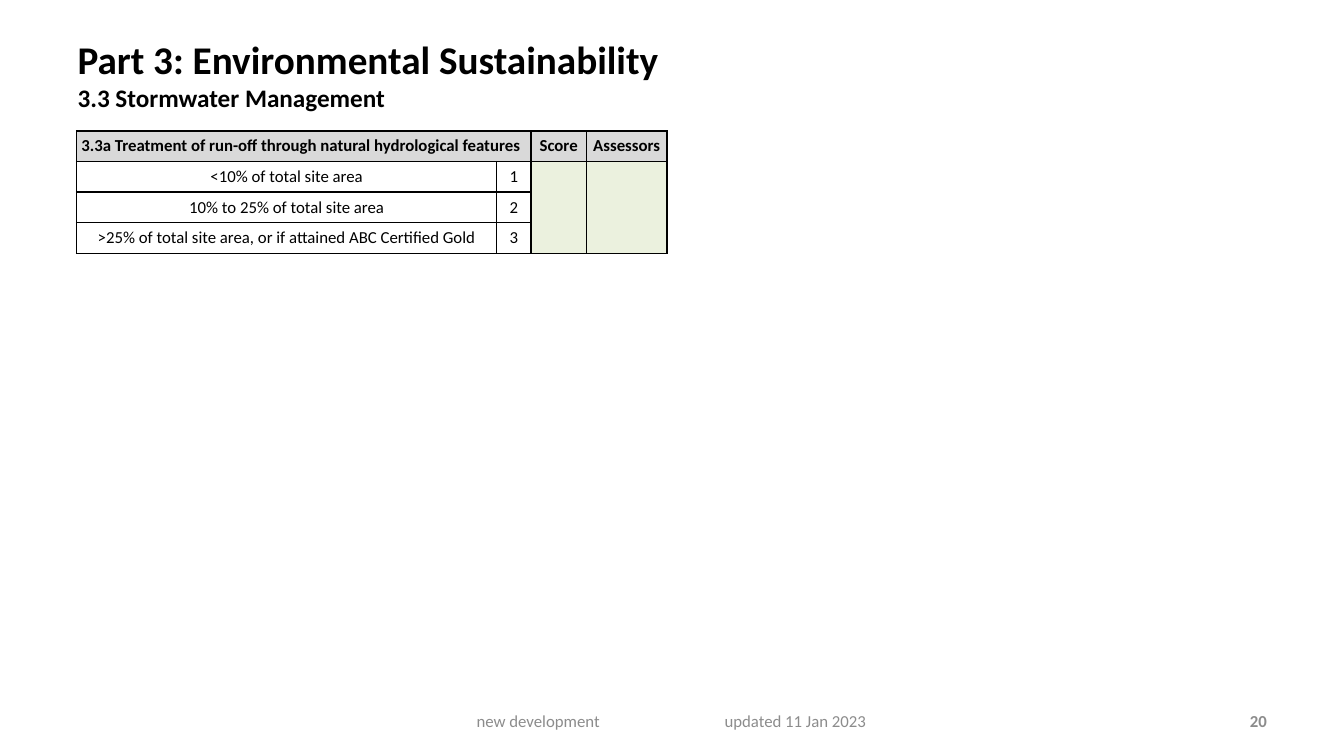
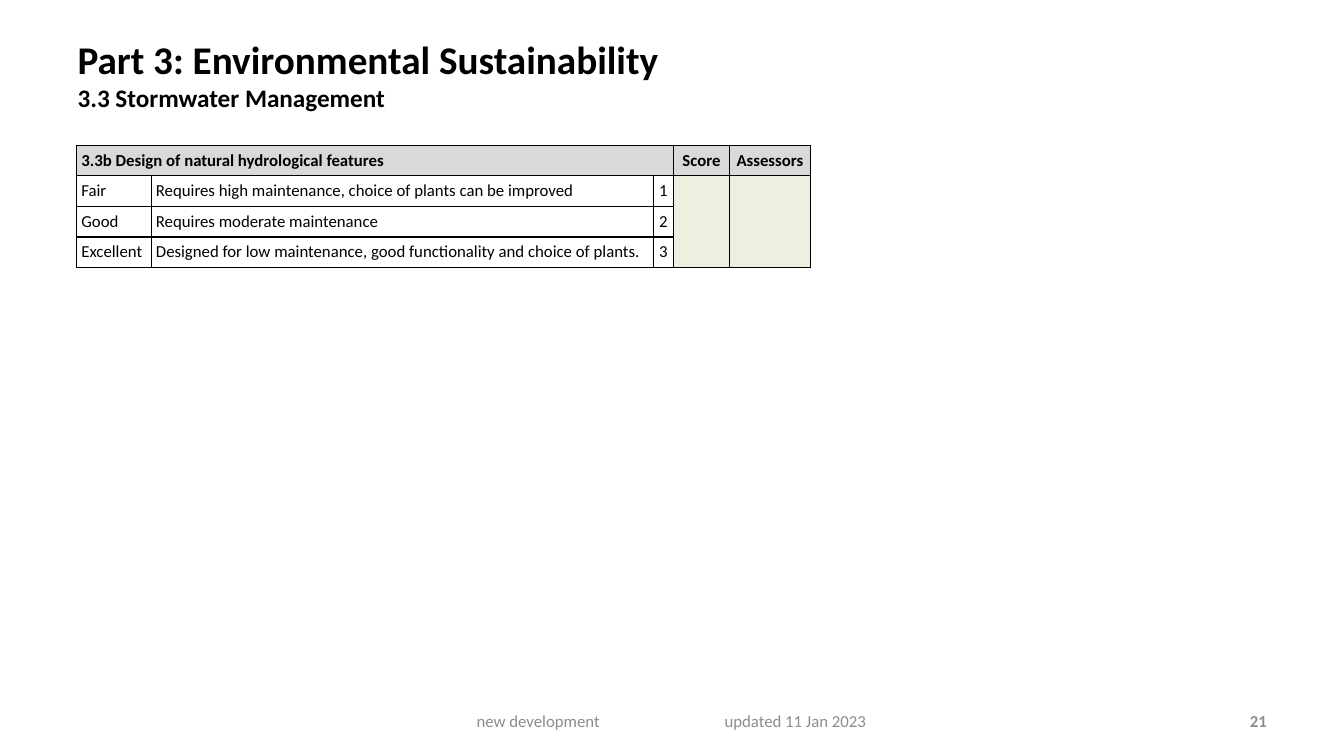
from dataclasses import dataclass

from lxml import etree
from pptx import Presentation
from pptx.dml.color import RGBColor
from pptx.enum.text import MSO_ANCHOR, MSO_AUTO_SIZE, PP_ALIGN
from pptx.oxml.ns import qn
from pptx.util import Cm, Pt

LEFT, CENTER, RIGHT = PP_ALIGN.LEFT, PP_ALIGN.CENTER, PP_ALIGN.RIGHT
TOP, MIDDLE = MSO_ANCHOR.TOP, MSO_ANCHOR.MIDDLE
NO_AUTOFIT = MSO_AUTO_SIZE.NONE
TITLE_ONLY = 5


@dataclass(frozen=True)
class Theme:
    """Colours, type sizes and measures shared by all slides."""

    font: str = "Calibri"
    ink: str = "000000"
    muted: str = "8C8C8C"
    header_fill: str = "D9D9D9"
    body_fill: str = "FFFFFF"
    score_fill: str = "EBF1DE"
    title_size: int = 28
    subtitle_size: int = 18
    text_size: int = 12
    border: int = 1


@dataclass(frozen=True)
class Box:
    """A rectangle measured in centimetres."""

    left: float
    top: float
    width: float
    height: float

    def place(self):
        """Return the rectangle as lengths."""
        return Cm(self.left), Cm(self.top), Cm(self.width), Cm(self.height)


@dataclass(frozen=True)
class Criterion:
    """One scoring table with its page number and column layout."""

    page: int
    top: float
    heading: str
    widths: tuple
    label_align: PP_ALIGN
    rows: tuple


THEME = Theme()
TITLE_BOX = Box(1.7, 0.76, 26.31, 2.51)
FOOTER_BOX = Box(11.58, 17.65, 10.72, 1.02)
PAGE_BOX = Box(24.28, 17.65, 7.9, 1.02)
TABLE_LEFT = 1.93
ROW_HEIGHT = 0.77
CELL_INSET = 0.12
FOOTER_INSET = 0.43
FOOTER_TAB = 6.25
TITLE = "Part 3: Environmental Sustainability"
SUBTITLE = "3.3 Stormwater Management"
FOOTER = "new development\tupdated 11 Jan 2023"
SCORE_HEADINGS = ("Score", "Assessors")

CRITERIA = (
    Criterion(
        20, 3.3, "3.3a Treatment of run-off through natural hydrological features",
        (10.59, 0.86, 1.4, 2.03), CENTER,
        (
            ("<10% of total site area", "1"),
            ("10% to 25% of total site area", "2"),
            (">25% of total site area, or if attained ABC Certified Gold", "3"),
        ),
    ),
    Criterion(
        21, 3.66, "3.3b Design of natural hydrological features",
        (1.88, 12.65, 0.51, 1.42, 2.03), LEFT,
        (
            ("Fair", "Requires high maintenance, choice of plants can be improved", "1"),
            ("Good", "Requires moderate maintenance", "2"),
            ("Excellent", "Designed for low maintenance, good functionality and choice of plants.", "3"),
        ),
    ),
)


def style_para(para, size, color=THEME.ink, bold=False, align=LEFT):
    """Align a paragraph and format its runs."""
    para.alignment = align
    for span in para.runs:
        span.font.name = THEME.font
        span.font.size = Pt(size)
        span.font.bold = bold
        span.font.color.rgb = RGBColor.from_string(color)


def add_title(slide, box):
    """Fill the title placeholder with the part and section names."""
    title = slide.shapes.title
    title.left, title.top, title.width, title.height = box.place()
    frame = title.text_frame
    frame.text = f"{TITLE}\n{SUBTITLE}"
    frame.auto_size = NO_AUTOFIT
    frame.vertical_anchor = TOP
    for para, size in zip(frame.paragraphs, (THEME.title_size, THEME.subtitle_size)):
        style_para(para, size, bold=True)


def add_muted_text(slide, box, text, bold=False, align=LEFT):
    """Add one line of grey text and return its frame."""
    frame = slide.shapes.add_textbox(*box.place()).text_frame
    frame.word_wrap = True
    frame.vertical_anchor = MIDDLE
    frame.text = text
    style_para(frame.paragraphs[0], THEME.text_size, THEME.muted, bold, align)
    return frame


def add_footer(slide, footer_box, page_box, page):
    """Add the footer line and the page number."""
    frame = add_muted_text(slide, footer_box, FOOTER)
    frame.margin_left = Cm(FOOTER_INSET)
    properties = frame.paragraphs[0]._p.get_or_add_pPr()
    tabs = etree.SubElement(properties, qn("a:tabLst"))
    etree.SubElement(tabs, qn("a:tab"), pos=str(Cm(FOOTER_TAB)), algn="l")
    add_muted_text(slide, page_box, str(page), True, RIGHT)


def add_borders(cell):
    """Draw a solid line on every side of a cell."""
    properties = cell._tc.get_or_add_tcPr()
    for side in ("lnL", "lnR", "lnT", "lnB"):
        line = etree.SubElement(properties, qn(f"a:{side}"), w=str(Pt(THEME.border)))
        fill = etree.SubElement(line, qn("a:solidFill"))
        etree.SubElement(fill, qn("a:srgbClr"), val=THEME.ink)


def fill_cell(cell, text, fill, bold, align):
    """Write and format one table cell."""
    add_borders(cell)
    cell.fill.solid()
    cell.fill.fore_color.rgb = RGBColor.from_string(fill)
    cell.margin_left = cell.margin_right = Cm(CELL_INSET)
    cell.margin_top = cell.margin_bottom = Cm(CELL_INSET)
    cell.vertical_anchor = MIDDLE
    para = cell.text_frame.paragraphs[0]
    para.add_run().text = text
    style_para(para, THEME.text_size, bold=bold, align=align)


def add_score_table(slide, box, criterion):
    """Add a table of graded options with merged score columns."""
    row_count, column_count = len(criterion.rows) + 1, len(criterion.widths)
    table = slide.shapes.add_table(row_count, column_count, *box.place()).table
    table.first_row = table.horz_banding = False
    for column, width in zip(table.columns, criterion.widths):
        column.width = Cm(width)
    for row in table.rows:
        row.height = Cm(box.height / row_count)

    score_start = column_count - len(SCORE_HEADINGS)
    headings = (criterion.heading, *[""] * (score_start - 1), *SCORE_HEADINGS)
    for index, text in enumerate(headings):
        align = CENTER if index >= score_start else LEFT
        fill_cell(table.cell(0, index), text, THEME.header_fill, True, align)
    for row_index, texts in enumerate(criterion.rows, 1):
        for index, text in enumerate((*texts, *[""] * len(SCORE_HEADINGS))):
            fill = THEME.score_fill if index >= score_start else THEME.body_fill
            align = criterion.label_align if index < score_start - 1 else CENTER
            fill_cell(table.cell(row_index, index), text, fill, False, align)

    table.cell(0, 0).merge(table.cell(0, score_start - 1))
    for index in range(score_start, column_count):
        table.cell(1, index).merge(table.cell(row_count - 1, index))


def add_criterion_slide(deck, criterion):
    """Add one slide with title, score table and footer."""
    slide = deck.slides.add_slide(deck.slide_layouts[TITLE_ONLY])
    add_title(slide, TITLE_BOX)
    height = ROW_HEIGHT * (len(criterion.rows) + 1)
    table_box = Box(TABLE_LEFT, criterion.top, sum(criterion.widths), height)
    add_score_table(slide, table_box, criterion)
    add_footer(slide, FOOTER_BOX, PAGE_BOX, criterion.page)


def main():
    """Build and save the deck."""
    deck = Presentation()
    deck.slide_width, deck.slide_height = Cm(33.87), Cm(19.05)
    for criterion in CRITERIA:
        add_criterion_slide(deck, criterion)
    deck.save("out.pptx")


if __name__ == "__main__":
    main()
